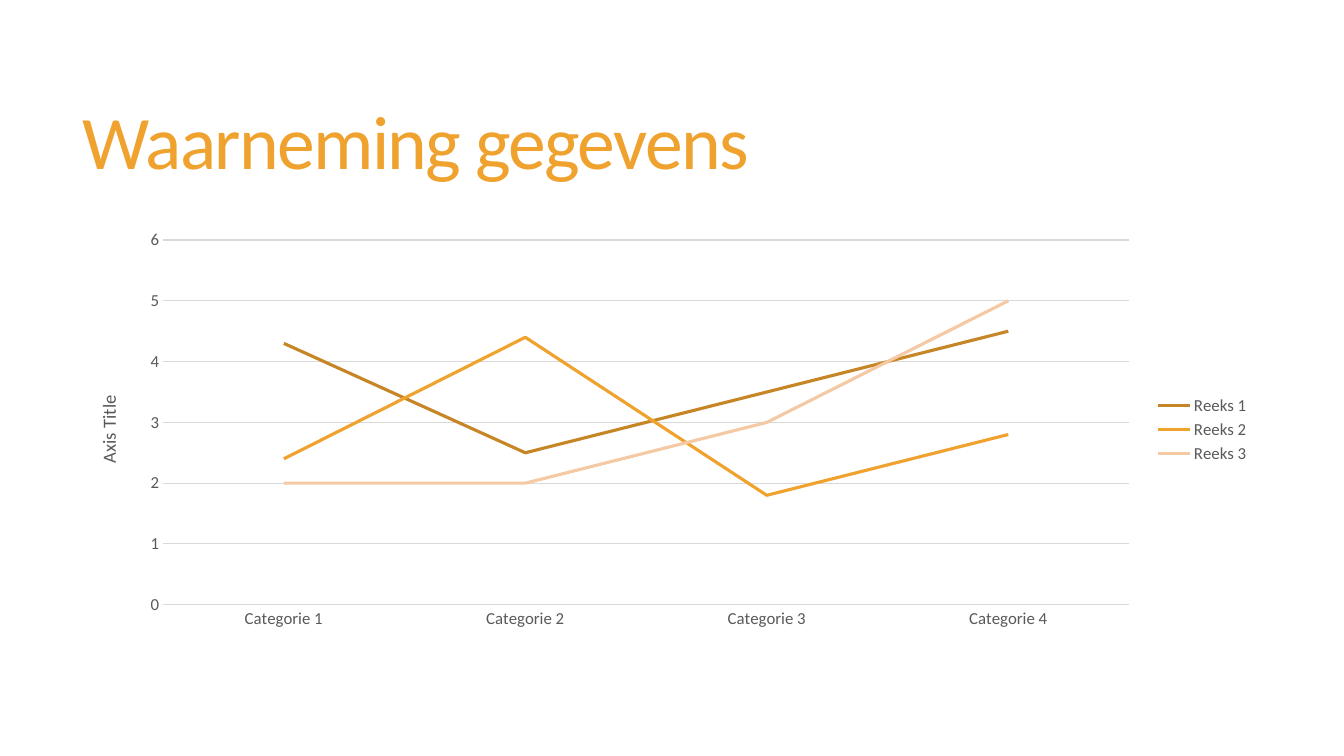
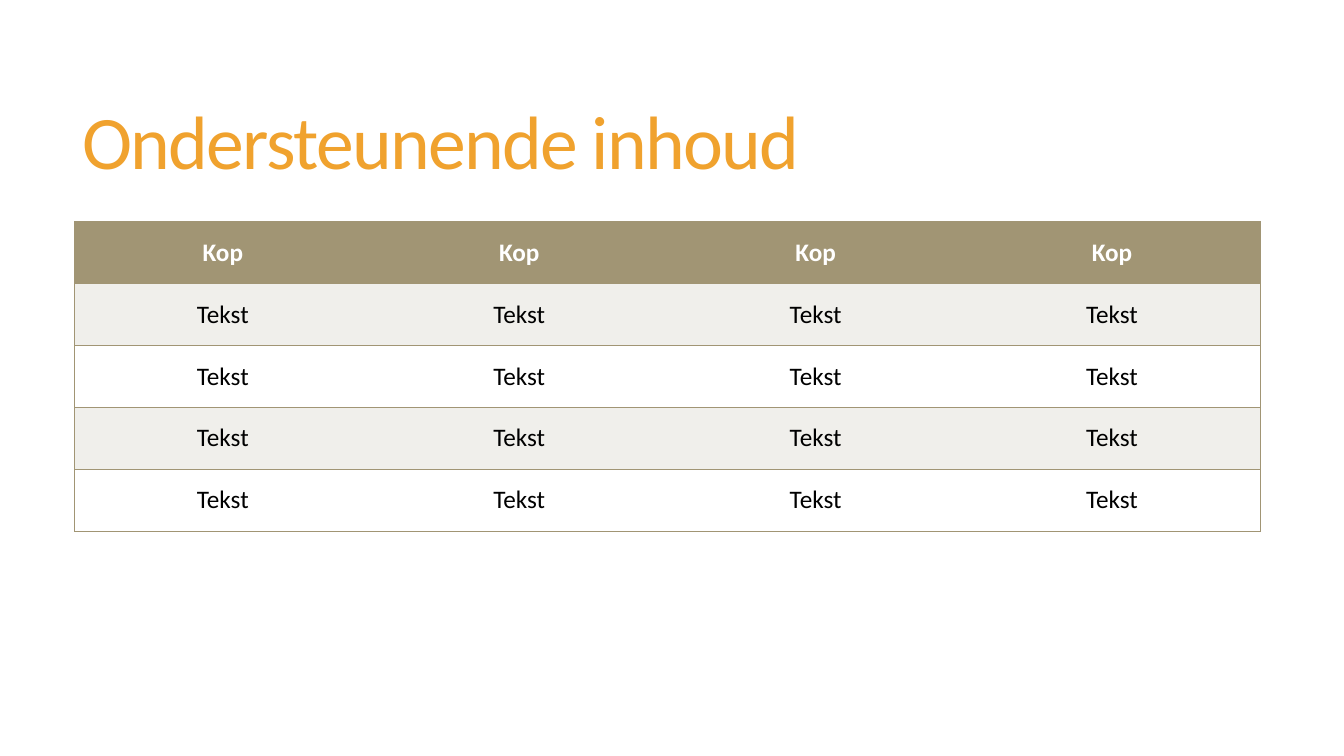
"""Builds two slides: a line chart of observations and a supporting table."""
from lxml.etree import SubElement
from pptx import Presentation
from pptx.chart.data import CategoryChartData
from pptx.dml.color import RGBColor
from pptx.enum.chart import XL_CHART_TYPE, XL_LEGEND_POSITION, XL_TICK_MARK
from pptx.enum.text import MSO_ANCHOR, PP_ALIGN
from pptx.oxml.ns import qn
from pptx.util import Inches, Pt

AMBER = RGBColor(0xF0, 0xA2, 0x2E)
BRONZE = RGBColor(0xC7, 0x86, 0x26)
PEACH = RGBColor(0xF5, 0xC9, 0xA4)
OLIVE = RGBColor(0xA1, 0x95, 0x74)
PALE = RGBColor(0xF0, 0xEF, 0xEB)
WHITE = RGBColor(0xFF, 0xFF, 0xFF)
BLACK = RGBColor(0, 0, 0)
GRAY = RGBColor(0x59, 0x59, 0x59)
LIGHT_GRAY = RGBColor(0xD9, 0xD9, 0xD9)
FONT = "Calibri"
CONTENT_LEFT, CONTENT_TOP, CONTENT_WIDTH = Inches(0.74), Inches(2.2), Inches(11.76)


def set_font(font, color, **formats):
    font.color.rgb = color
    for name, value in {"name": FONT, "bold": False, **formats}.items():
        setattr(font, name, value)


def add_page(deck, title):
    page = deck.slides.add_slide(deck.slide_layouts[6])
    box = page.shapes.add_textbox(Inches(0.72), Inches(0.55), Inches(11.78), Inches(1.81))
    frame = box.text_frame
    frame.word_wrap = True
    frame.vertical_anchor = MSO_ANCHOR.MIDDLE
    para = frame.paragraphs[0]
    para.line_spacing = 0.85
    span = para.add_run()
    span.text = title
    set_font(span.font, AMBER, size=Pt(54))
    span.font._element.set("spc", "-120")
    return page


deck = Presentation()
deck.slide_width, deck.slide_height = Inches(13.33), Inches(7.5)

page = add_page(deck, "Waarneming gegevens")
series_styles = {
    "Reeks 1": ((4.3, 2.5, 3.5, 4.5), BRONZE),
    "Reeks 2": ((2.4, 4.4, 1.8, 2.8), AMBER),
    "Reeks 3": ((2, 2, 3, 5), PEACH),
}
data = CategoryChartData()
data.categories = [f"Categorie {number}" for number in range(1, 5)]
for name, (values, color) in series_styles.items():
    data.add_series(name, values)
chart = page.shapes.add_chart(
    XL_CHART_TYPE.LINE, CONTENT_LEFT, CONTENT_TOP, CONTENT_WIDTH, Inches(4.12), data
).chart
set_font(chart.font, GRAY, size=Pt(12))
chart.has_title = False
chart.has_legend = True
chart.legend.position = XL_LEGEND_POSITION.RIGHT
chart.legend.include_in_layout = False
set_font(chart.legend.font, GRAY, size=Pt(12))
plot = chart.plots[0]
plot.vary_by_categories = False
for series in plot.series:
    series.smooth = False
    series.format.line.color.rgb = series_styles[series.name][1]
    series.format.line.width = Pt(2.25)

value_axis = chart.value_axis
for axis in (chart.category_axis, value_axis):
    axis.major_tick_mark = axis.minor_tick_mark = XL_TICK_MARK.NONE
    set_font(axis.tick_labels.font, GRAY, size=Pt(12))
for line in (chart.category_axis.format.line, value_axis.major_gridlines.format.line):
    line.color.rgb = LIGHT_GRAY
    line.width = Pt(0.75)
value_axis.format.line.fill.background()
for name, value in {"minimum_scale": 0, "maximum_scale": 6, "major_unit": 1}.items():
    setattr(value_axis, name, value)
axis_frame = value_axis.axis_title.text_frame
axis_frame._txBody.bodyPr.set("rot", "-5400000")
axis_span = axis_frame.paragraphs[0].add_run()
axis_span.text = "Axis Title"
set_font(axis_span.font, GRAY, size=Pt(13.3))

page = add_page(deck, "Ondersteunende inhoud")
row_count, column_count = 5, 4
table = page.shapes.add_table(
    row_count, column_count, CONTENT_LEFT, CONTENT_TOP, CONTENT_WIDTH, Inches(3.07)
).table
for row_index in range(row_count):
    is_header = row_index == 0
    for column_index in range(column_count):
        cell = table.cell(row_index, column_index)
        borders = {
            "a:lnL": column_index == 0,
            "a:lnR": column_index == column_count - 1,
            "a:lnT": True,
            "a:lnB": True,
        }
        properties = cell._tc.get_or_add_tcPr()
        for tag, visible in borders.items():
            border = SubElement(properties, qn(tag), w=str(Pt(1)))
            if visible:
                paint = SubElement(border, qn("a:solidFill"))
                SubElement(paint, qn("a:srgbClr"), val=str(OLIVE))
            else:
                SubElement(border, qn("a:noFill"))
        cell.fill.solid()
        cell.fill.fore_color.rgb = OLIVE if is_header else (PALE if row_index % 2 else WHITE)
        cell.vertical_anchor = MSO_ANCHOR.MIDDLE
        para = cell.text_frame.paragraphs[0]
        para.alignment = PP_ALIGN.CENTER
        span = para.add_run()
        span.text = "Kop" if is_header else "Tekst"
        set_font(span.font, WHITE if is_header else BLACK, size=Pt(18), bold=is_header)

deck.save("out.pptx")
